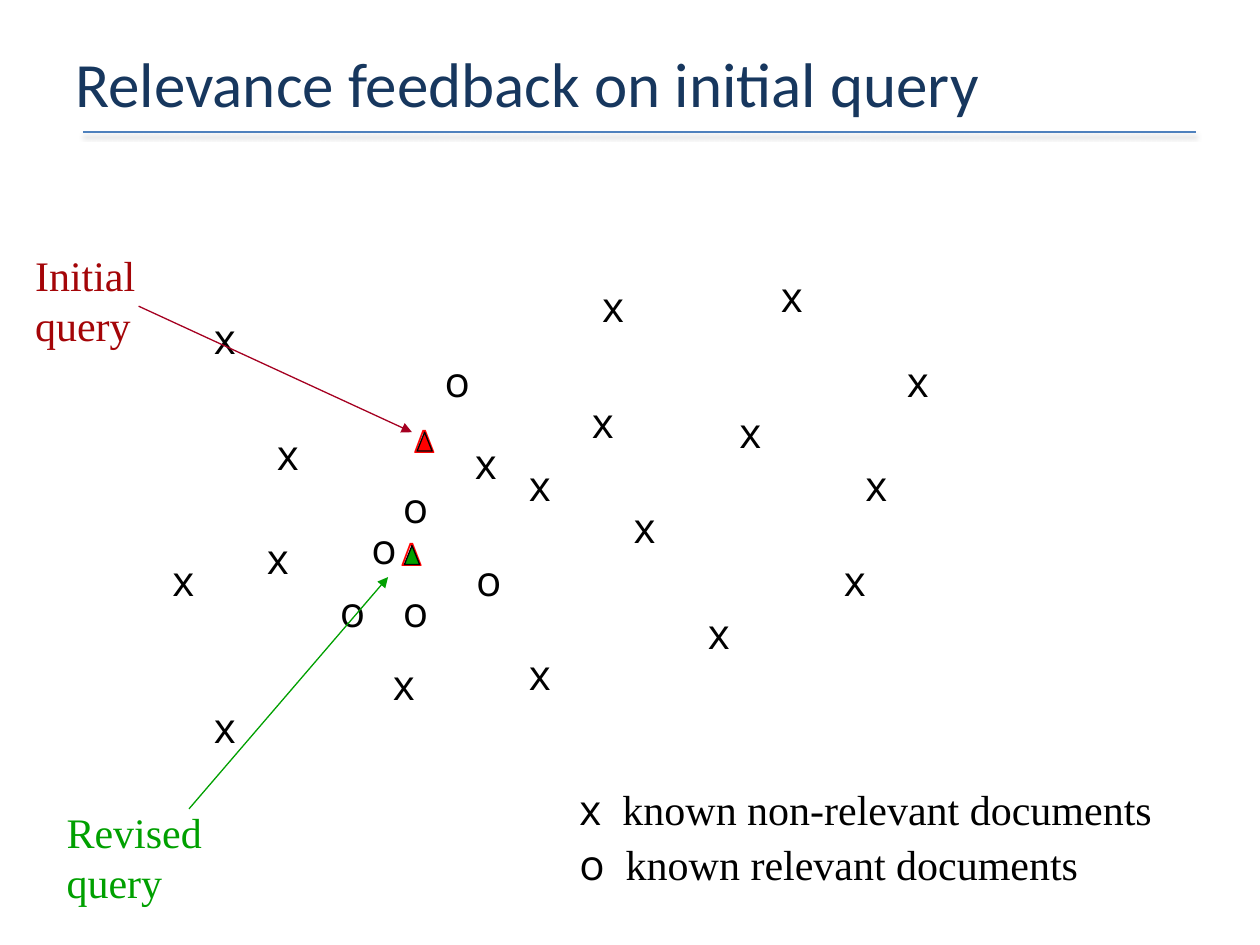
from dataclasses import dataclass

from lxml import etree
from pptx import Presentation
from pptx.dml.color import RGBColor
from pptx.enum.shapes import MSO_CONNECTOR as Conn
from pptx.enum.text import MSO_ANCHOR as Anchor, MSO_AUTO_SIZE as AutoSize
from pptx.oxml.ns import qn
from pptx.util import Inches, Pt

SANS, SERIF, HEADING = "Open Sans", "Times New Roman", "Calibri"
BLACK, GREEN, RED = "000000", "00A000", "FF0000"


@dataclass
class Query:
    label: str
    box: tuple[float, float, float, float]
    color: str
    arrow_color: str
    arrow_start: tuple[float, float]
    arrow_end: tuple[float, float]
    marker: tuple[float, float]
    marker_fill: str


NON_RELEVANT = [
    (4.1, 3.6), (4.6, 3.1), (4.93, 3.93), (2.02, 4.18), (3.67, 3.42),
    (4.68, 2.18), (2.1, 3.35), (5.77, 3.18), (1.6, 2.43), (6.1, 2.1),
    (1.6, 5.52), (1.27, 4.35), (4.1, 5.1), (3.02, 5.18), (6.77, 3.6),
    (5.52, 4.77), (6.6, 4.35), (7.1, 2.77),
]
RELEVANT = [
    (2.6, 4.6), (3.68, 4.35), (3.1, 4.6), (2.85, 4.1), (3.43, 2.77), (3.1, 3.77),
]
QUERIES = [
    Query("Revised query", (0.43, 6.35, 1.92, 0.9), GREEN, GREEN,
          (1.5, 6.42), (3.08, 4.58), (3.08, 4.17), GREEN),
    Query("Initial query", (0.18, 1.93, 1.25, 0.9), "A40508", "A50021",
          (1.1, 2.43), (3.27, 3.43), (3.18, 3.27), RED),
]


def rgb(color: str) -> RGBColor:
    return RGBColor.from_string(color)


def add_text(shapes, box: tuple, text: str, size: float, font: str, color: str):
    sp = shapes.add_textbox(*map(Inches, box))
    tf = sp.text_frame
    tf.word_wrap = True
    tf.auto_size = AutoSize.SHAPE_TO_FIT_TEXT
    p = tf.paragraphs[0]
    p.text = text
    p.font.size, p.font.name = Pt(size), font
    p.font.color.rgb = rgb(color)
    return sp


def add_line(shapes, start: tuple, end: tuple, color: str, width: float):
    line = shapes.add_connector(Conn.STRAIGHT, *map(Inches, start + end))
    line.line.color.rgb = rgb(color)
    line.line.width = Pt(width)
    etree.SubElement(line._element.spPr, qn("a:effectLst"))
    return line


def add_arrow(shapes, start: tuple, end: tuple, color: str) -> None:
    arrow = add_line(shapes, start, end, color, 0.75)
    etree.SubElement(arrow.line._get_or_add_ln(), qn("a:tailEnd"), type="triangle")


def add_shadow(line) -> None:
    effects = line._element.spPr.find(qn("a:effectLst"))
    shadow = etree.SubElement(effects, qn("a:outerShdw"), blurRad=str(Pt(3.1)),
                              dist=str(Pt(1.6)), dir="5400000", rotWithShape="0")
    color = etree.SubElement(shadow, qn("a:srgbClr"), val=BLACK)
    etree.SubElement(color, qn("a:alpha"), val="38000")


def add_marker(shapes, left: float, top: float, fill: str) -> None:
    group = shapes.add_group_shape().shapes
    add_text(group, (left, top, 0.5, 0.43), "Δ", 20, SERIF, RED)
    x, y = left + 0.13, top + 0.16
    corners = [(x, y + 0.15), (x + 0.06, y), (x + 0.12, y + 0.15)]
    first, *rest = [(Inches(cx), Inches(cy)) for cx, cy in corners]
    builder = group.build_freeform(*first)
    builder.add_line_segments(rest, close=True)
    triangle = builder.convert_to_shape()
    triangle.shadow.inherit = False
    triangle.fill.solid()
    triangle.fill.fore_color.rgb = rgb(fill)
    triangle.line.color.rgb = rgb(BLACK)
    triangle.line.width = Pt(0.75)


def add_legend(shapes) -> None:
    sp = add_text(shapes, (4.5, 6.17, 4.92, 0.94), "", 24, SERIF, BLACK)
    tf = sp.text_frame
    entries = [("x", "  known non-relevant documents"), ("o", "  known relevant documents")]
    for i, (symbol, meaning) in enumerate(entries):
        p = tf.add_paragraph() if i else tf.paragraphs[0]
        p.font.size = Pt(24)
        p.font.color.rgb = rgb(BLACK)
        p.space_before = Pt(2.4 * i)
        for text, font in ((symbol, SANS), (meaning, SERIF)):
            r = p.add_run()
            r.text, r.font.name = text, font


def main() -> None:
    prs = Presentation()
    prs.slide_width, prs.slide_height = Inches(10), Inches(7.5)
    s = prs.slides.add_slide(prs.slide_layouts[6])

    # Title and rule
    add_shadow(add_line(s.shapes, (0.66, 1.05), (9.49, 1.05), "4F81BD", 1))
    title = add_text(s.shapes, (0.5, 0.3, 9, 0.71),
                     "Relevance feedback on initial query", 36, HEADING, "17375E")
    title.text_frame.auto_size = AutoSize.NONE
    title.text_frame.vertical_anchor = Anchor.MIDDLE

    # Documents
    for symbol, width, places in (("x", 0.33, NON_RELEVANT), ("o", 0.67, RELEVANT)):
        for left, top in places:
            add_text(s.shapes, (left, top, width, 0.5), symbol, 24, SANS, BLACK)

    # Queries with their arrows and markers
    for q in QUERIES:
        add_text(s.shapes, q.box, q.label, 24, SERIF, q.color)
        add_arrow(s.shapes, q.arrow_start, q.arrow_end, q.arrow_color)
        add_marker(s.shapes, *q.marker, q.marker_fill)

    add_legend(s.shapes)
    prs.save("out.pptx")


if __name__ == "__main__":
    main()
